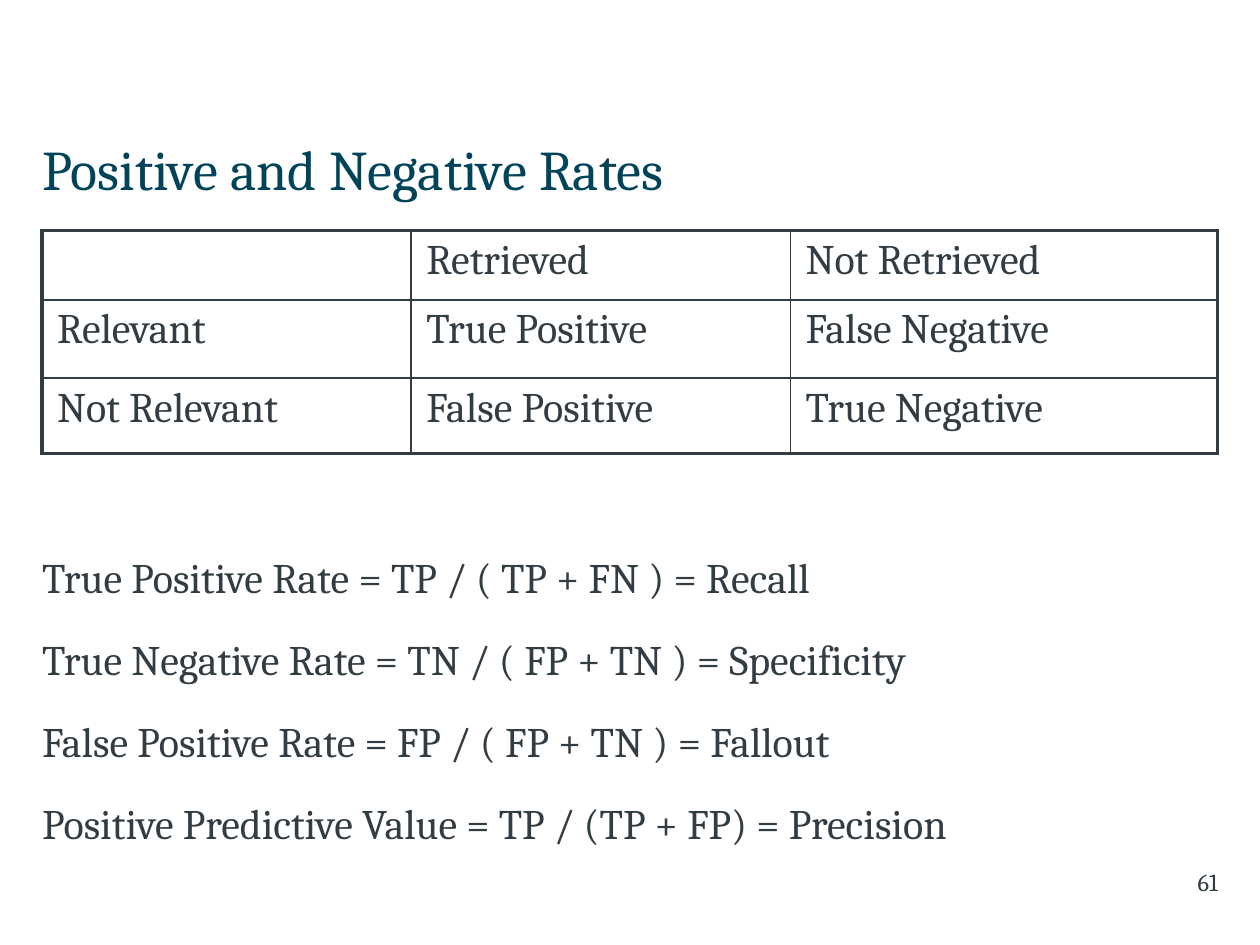
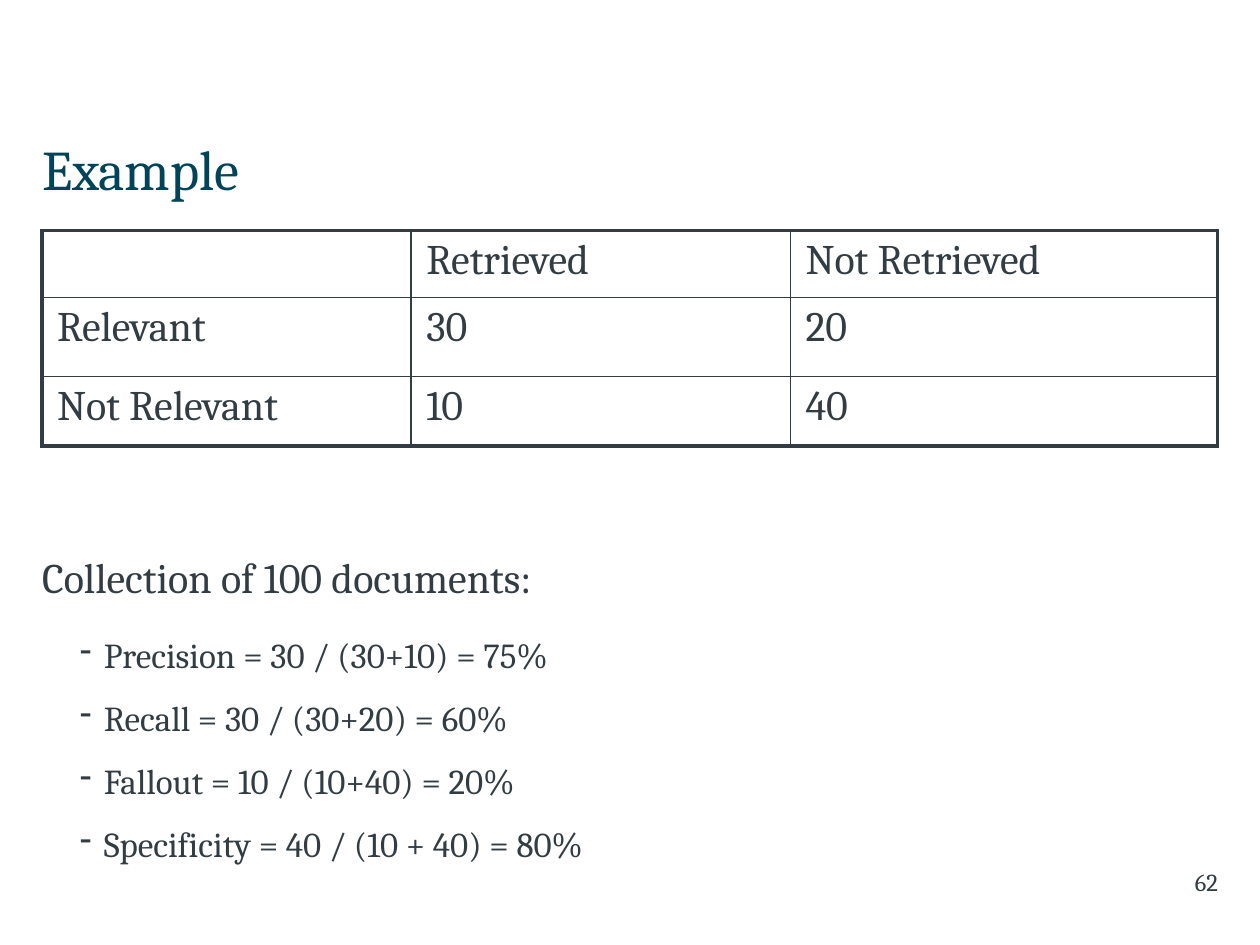
from lxml import etree
from pptx import Presentation
from pptx.dml.color import RGBColor
from pptx.enum.text import MSO_ANCHOR, PP_ALIGN
from pptx.oxml.ns import qn
from pptx.util import Inches, Pt

TOP, MIDDLE = MSO_ANCHOR.TOP, MSO_ANCHOR.MIDDLE
LEFT, RIGHT = PP_ALIGN.LEFT, PP_ALIGN.RIGHT

COLORS = {"title": "014359", "ink": "323D43"}
FONT = "Cambria"
HEADINGS = ["", "Retrieved", "Not Retrieved"]
SLIDES = [
    {
        "title": "Positive and Negative Rates",
        "outcomes": [
            HEADINGS,
            ["Relevant", "True Positive", "False Negative"],
            ["Not Relevant", "False Positive", "True Negative"],
        ],
        "row_heights": [0.55, 0.62, 0.6],
        "statements": [
            "True Positive Rate = TP / ( TP + FN ) = Recall",
            "True Negative Rate = TN / ( FP + TN ) = Specificity",
            "False Positive Rate = FP / ( FP + TN ) = Fallout",
            "Positive Predictive Value = TP / (TP + FP) = Precision",
        ],
        "measures": [],
    },
    {
        "title": "Example",
        "outcomes": [
            HEADINGS,
            ["Relevant", "30", "20"],
            ["Not Relevant", "10", "40"],
        ],
        "row_heights": [0.53, 0.63, 0.55],
        "statements": ["Collection of 100 documents:"],
        "measures": [
            "Precision = 30 / (30+10) = 75%",
            "Recall = 30 / (30+20) = 60%",
            "Fallout = 10 / (10+40) = 20%",
            "Specificity = 40 / (10 + 40) = 80%",
        ],
    },
]
FIRST_NUMBER = 61

WIDTH, HEIGHT = 10, 7.5
MARGIN = WIDTH / 30
CONTENT_WIDTH = WIDTH - 2 * MARGIN
COLUMN_WIDTHS = [2.93, 3.01, 3.39]
NUMBER_WIDTH = 2.17
THICK, THIN = 2.25, 1
CELL_INSET = 0.12


def style(paragraph, size, color="ink", align=LEFT, space_after=0):
    paragraph.font.name = FONT
    paragraph.font.size = Pt(size)
    paragraph.font.color.rgb = RGBColor.from_string(COLORS[color])
    paragraph.alignment = align
    paragraph.space_after = Pt(space_after)


def add_frame(slide, left, top, width, height, insets=(0, 0.1), anchor=TOP):
    frame = slide.shapes.add_textbox(*map(Inches, (left, top, width, height))).text_frame
    frame.word_wrap = True
    frame.margin_left, frame.margin_right = map(Inches, insets)
    frame.vertical_anchor = anchor
    return frame


def add_dash(paragraph):
    properties = paragraph._p.get_or_add_pPr()
    properties.set("lvl", "1")
    properties.set("marL", str(Inches(0.49)))
    properties.set("indent", str(Inches(-0.19)))
    etree.SubElement(properties, qn("a:buChar")).set("char", "-")


def add_borders(cell, widths):
    properties = cell._tc.get_or_add_tcPr()
    for place, (side, width) in enumerate(widths.items()):
        line = etree.Element(qn("a:ln" + side), w=str(Pt(width)))
        fill = etree.SubElement(line, qn("a:solidFill"))
        etree.SubElement(fill, qn("a:srgbClr")).set("val", COLORS["ink"])
        properties.insert(place, line)


def add_outcomes(slide, outcomes, row_heights):
    last_row, last_column = len(outcomes) - 1, len(COLUMN_WIDTHS) - 1
    table = slide.shapes.add_table(
        len(outcomes), len(COLUMN_WIDTHS), Inches(MARGIN), Inches(1.83),
        Inches(CONTENT_WIDTH), Inches(sum(row_heights)),
    ).table
    table.first_row = table.horz_banding = False
    for column, width in zip(table.columns, COLUMN_WIDTHS):
        column.width = Inches(width)
    for r, (labels, height) in enumerate(zip(outcomes, row_heights)):
        table.rows[r].height = Inches(height)
        for c, label in enumerate(labels):
            cell = table.cell(r, c)
            cell.text = label
            cell.margin_left = cell.margin_right = Inches(CELL_INSET)
            cell.fill.background()
            style(cell.text_frame.paragraphs[0], 24)
            add_borders(cell, {
                "L": THICK if c == 0 else THIN,
                "R": THICK if c == last_column else THIN,
                "T": THICK if r == 0 else THIN,
                "B": THICK if r == last_row else THIN,
            })


def add_body(slide, statements, measures):
    frame = add_frame(slide, MARGIN, 4.33, CONTENT_WIDTH, 2.33)
    frame.text = "\n".join(statements + measures)
    for i, paragraph in enumerate(frame.paragraphs):
        if i < len(statements):
            style(paragraph, 24, space_after=18)
        else:
            style(paragraph, 20, space_after=12)
            add_dash(paragraph)


def build_slide(deck, content, number):
    slide = deck.slides.add_slide(deck.slide_layouts[6])
    title = add_frame(slide, MARGIN, 1, CONTENT_WIDTH, 0.67, anchor=MIDDLE)
    title.text = content["title"]
    style(title.paragraphs[0], 32, "title")
    add_outcomes(slide, content["outcomes"], content["row_heights"])
    add_body(slide, content["statements"], content["measures"])
    footer = add_frame(slide, WIDTH - MARGIN - NUMBER_WIDTH, 6.83, NUMBER_WIDTH, 0.5, (0.1, 0))
    footer.text = str(number)
    style(footer.paragraphs[0], 14, align=RIGHT)


def main():
    deck = Presentation()
    deck.slide_width, deck.slide_height = Inches(WIDTH), Inches(HEIGHT)
    for number, content in enumerate(SLIDES, FIRST_NUMBER):
        build_slide(deck, content, number)
    deck.save("out.pptx")


if __name__ == "__main__":
    main()
